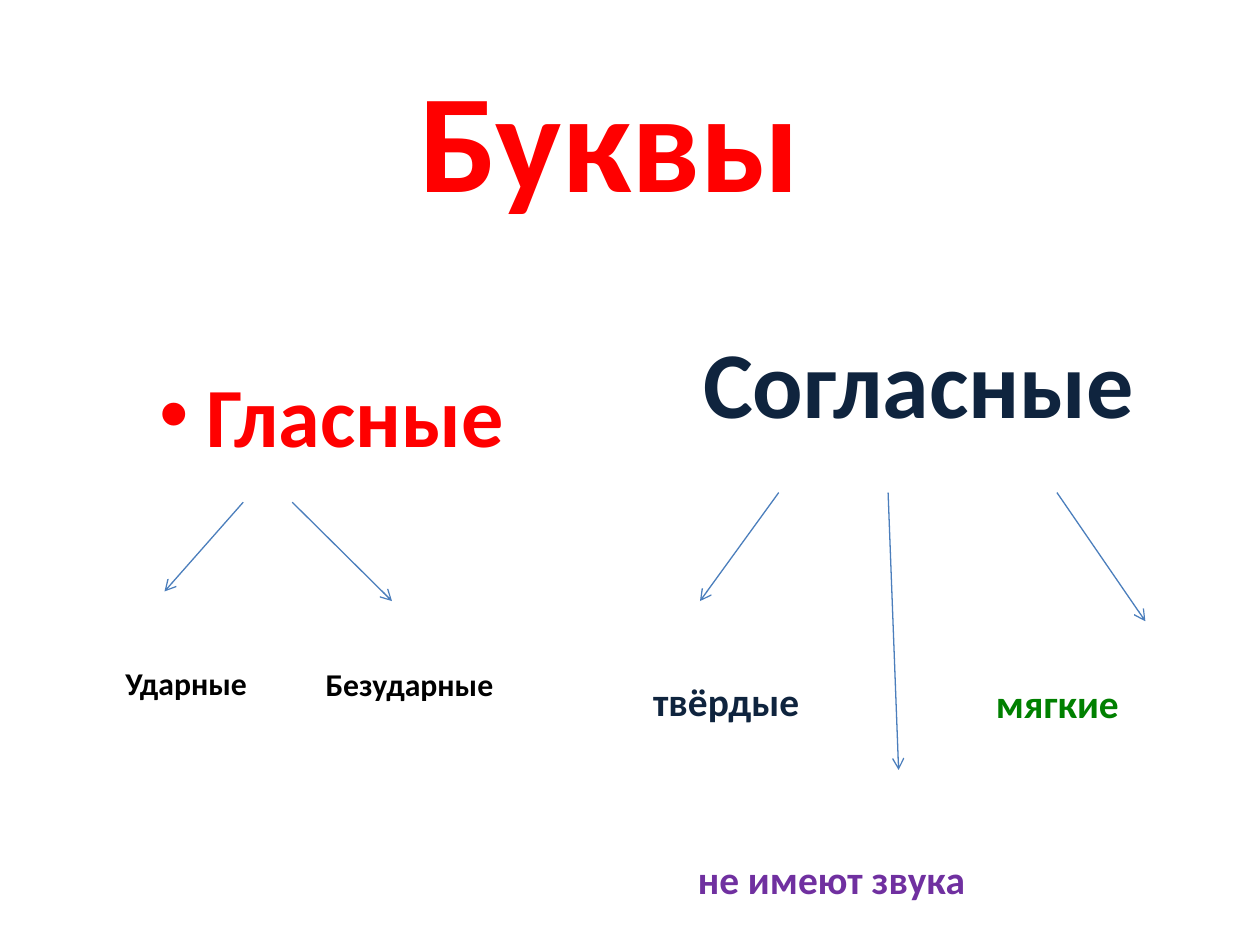
import pptx
import pptx.dml.color
import pptx.enum.shapes
import pptx.enum.text
import pptx.oxml.ns
import pptx.util
from lxml import etree

Pt = pptx.util.Pt
ALIGN = pptx.enum.text.PP_ALIGN
qn = pptx.oxml.ns.qn

COLORS = {
    "red": "FF0000",
    "navy": "0F243E",
    "black": "000000",
    "green": "008000",
    "purple": "7030A0",
    "arrow": "4B7EBC",
}


def rgb(name):
    return pptx.dml.color.RGBColor.from_string(COLORS[name])


def fill_frame(holder, box, margin_top, lines):
    """Place a text holder and write its lines, each with its own format."""
    for side, value in zip(("left", "top", "width", "height"), box):
        setattr(holder, side, Pt(value))
    frame = holder.text_frame
    frame_format = {
        "word_wrap": True,
        "auto_size": pptx.enum.text.MSO_AUTO_SIZE.NONE,
        "vertical_anchor": pptx.enum.text.MSO_ANCHOR.TOP,
        "margin_top": Pt(margin_top),
    }
    for key, value in frame_format.items():
        setattr(frame, key, value)
    for number, line in enumerate(lines):
        paragraph = frame.add_paragraph() if number else frame.paragraphs[0]
        paragraph.alignment = line.get("align", ALIGN.LEFT)
        paragraph.space_before = Pt(line.get("before", 0))
        props = paragraph._p.get_or_add_pPr()
        props.set("marL", str(Pt(line.get("margin", 0))))
        props.set("indent", str(Pt(line.get("indent", 0))))
        if "bullet" in line:
            etree.SubElement(props, qn("a:buChar")).set("char", line["bullet"])
        else:
            etree.SubElement(props, qn("a:buNone"))
        run = paragraph.add_run()
        run.text = line["text"]
        run_format = {"name": "Calibri", "size": Pt(line["size"]), "bold": True}
        for key, value in run_format.items():
            setattr(run.font, key, value)
        run.font.color.rgb = rgb(line["color"])


prs = pptx.Presentation()
prs.slide_width, prs.slide_height = Pt(720), Pt(540)
slide = prs.slides.add_slide(prs.slide_layouts[3])
letters, vowels, consonants = slide.placeholders

# Title
fill_frame(letters, (82, 26, 533, 104.4), 4, [
    {"text": "Буквы", "color": "red", "size": 80, "align": ALIGN.CENTER},
])

# Vowels: stressed in the list, unstressed beside it
fill_frame(vowels, (36, 126, 318, 356.4), 81.4, [
    {"text": "Гласные ", "color": "red", "size": 48.1, "align": ALIGN.CENTER,
     "bullet": "•", "margin": 27, "indent": -27},
    {"text": "Ударные", "color": "black", "size": 18.1,
     "before": 114, "indent": 28.5},
])
unstressed = slide.shapes.add_textbox(0, 0, 0, 0)
fill_frame(unstressed, (179, 380, 130, 24), 0, [
    {"text": "Безударные", "color": "black", "size": 18.1},
])

# Consonants: hard and silent in the list, soft beside it
fill_frame(consonants, (366, 126, 318, 356.4), 59.1, [
    {"text": "Согласные", "color": "navy", "size": 53.8, "align": ALIGN.CENTER},
    {"text": "твёрдые", "color": "navy", "size": 22.5, "before": 137.4},
    {"text": "не имеют звука", "color": "purple", "size": 22.5,
     "before": 74.8, "indent": 25.5},
])
soft = slide.shapes.add_textbox(0, 0, 0, 0)
fill_frame(soft, (562, 388, 110, 28), 0, [
    {"text": "мягкие", "color": "green", "size": 22.5},
])

# Arrows from each group to its kinds
arrows = [
    (139, 287, 94, 338),
    (167, 287, 224, 343.5),
    (445, 281.5, 400, 343.5),
    (604, 281.5, 654.5, 355),
    (507.5, 281.5, 513.5, 440),
]
for ends in arrows:
    arrow = slide.shapes.add_connector(
        pptx.enum.shapes.MSO_CONNECTOR.STRAIGHT, *map(Pt, ends))
    arrow.line.color.rgb = rgb("arrow")
    arrow.line.width = Pt(0.75)
    tip = etree.SubElement(arrow.line._get_or_add_ln(), qn("a:tailEnd"))
    tip.set("type", "arrow")
    etree.SubElement(arrow._element.spPr, qn("a:effectLst"))

prs.save("out.pptx")
